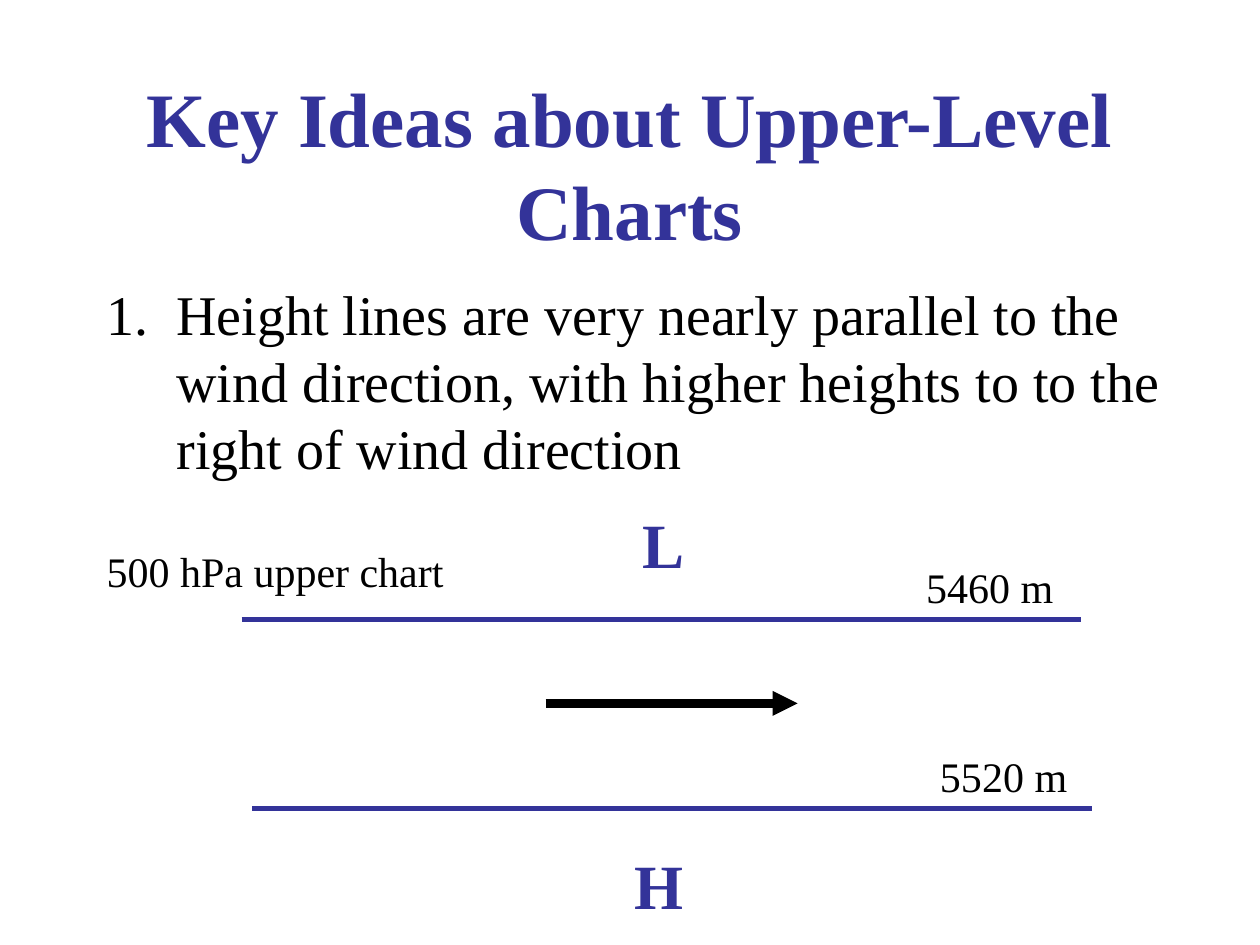
"""Build a slide on how height lines and wind relate on upper-level charts."""
import pptx
import pptx.dml.color
import pptx.enum.shapes
import pptx.enum.text
import pptx.oxml.ns
import pptx.util
from lxml import etree
from pptx.util import Cm

INDIGO = pptx.dml.color.RGBColor(0x33, 0x33, 0x99)
BLACK = pptx.dml.color.RGBColor(0, 0, 0)
FONT = "Times New Roman"


def add_element(parent, tag, **attributes):
    return etree.SubElement(parent, pptx.oxml.ns.qn(tag), **attributes)


def add_text(slide, text, left, top, width, height, size, color=BLACK,
             bold=False, wrap=False, numbered=False):
    box = slide.shapes.add_textbox(Cm(left), Cm(top), Cm(width), Cm(height))
    frame = box.text_frame
    frame.word_wrap = wrap
    paragraph = frame.paragraphs[0]
    paragraph.text = text
    if numbered:
        properties = paragraph._p.get_or_add_pPr()
        properties.set("marL", str(Cm(1.41)))
        properties.set("indent", str(-Cm(1.41)))
        add_element(properties, "a:buFont", typeface=FONT)
        add_element(properties, "a:buAutoNum", type="arabicPeriod")
    font = paragraph.font
    font.name = FONT
    font.size = pptx.util.Pt(size)
    font.bold = bold
    font.color.rgb = color
    return frame


def add_line(slide, left, top, length, color, weight, arrow=False):
    line = slide.shapes.add_connector(
        pptx.enum.shapes.MSO_CONNECTOR.STRAIGHT,
        Cm(left), Cm(top), Cm(left + length), Cm(top))
    line.line.color.rgb = color
    line.line.width = pptx.util.Pt(weight)
    if arrow:
        add_element(line.line._get_or_add_ln(), "a:tailEnd", type="triangle")
    add_element(line._element.spPr, "a:effectLst")


def add_title(slide, text):
    frame = add_text(slide, text, 1.9, 1.7, 21.59, 3.18, 44, INDIGO,
                     bold=True, wrap=True)
    frame.vertical_anchor = pptx.enum.text.MSO_ANCHOR.MIDDLE
    frame.paragraphs[0].alignment = pptx.enum.text.PP_ALIGN.CENTER


def add_height_line(slide, label, label_left, left, top):
    add_line(slide, left, top, 16.93, INDIGO, 3.25)
    add_text(slide, label, label_left, top - 1.29, 3.1, 1.29, 24)


def add_pressure_center(slide, letter, left, top, width):
    add_text(slide, letter, left, top, width, 1.8, 36, INDIGO, bold=True)


def main():
    deck = pptx.Presentation()
    deck.slide_width, deck.slide_height = Cm(25.4), Cm(19.05)
    slide = deck.slides.add_slide(deck.slide_layouts[6])

    add_title(slide, "Key Ideas about Upper-Level Charts")
    add_text(slide, "Height lines are very nearly parallel to the wind "
             "direction, with higher heights to to the right of wind direction",
             1.9, 5.51, 22.23, 4.45, 32, wrap=True, numbered=True)

    add_height_line(slide, "5460 m", 18.42, 4.87, 12.49)
    add_height_line(slide, "5520 m", 18.7, 5.08, 16.3)
    add_pressure_center(slide, "L", 12.7, 10.06, 1.37)
    add_pressure_center(slide, "H", 12.55, 16.94, 1.5)
    add_text(slide, "500 hPa upper chart", 1.9, 10.87, 7.37, 1.29, 24)
    add_line(slide, 11, 14.18, 5.08, BLACK, 4.75, arrow=True)

    deck.save("out.pptx")


if __name__ == "__main__":
    main()
